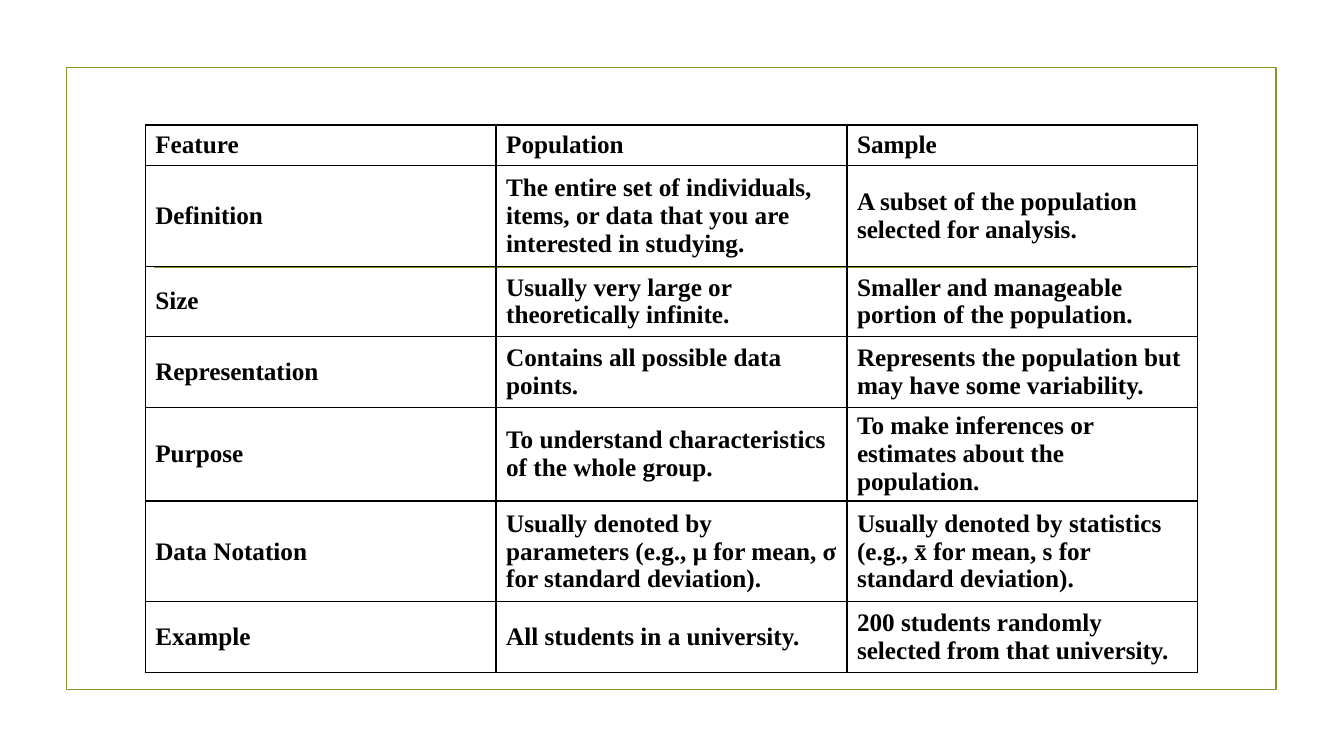
from dataclasses import dataclass

from lxml.etree import SubElement
from pptx import Presentation
from pptx.dml.color import RGBColor
from pptx.enum.shapes import MSO_CONNECTOR, MSO_SHAPE
from pptx.enum.text import MSO_ANCHOR
from pptx.oxml import parse_xml
from pptx.oxml.ns import nsdecls, qn
from pptx.slide import Slide
from pptx.table import Table, _Cell
from pptx.util import Inches, Pt

OLIVE = RGBColor(0x83, 0x99, 0x2A)
BLACK = RGBColor(0x00, 0x00, 0x00)
OUTLINE_WIDTH = Pt(1.25)
BORDER_WIDTH = Pt(1)
COLUMN_WIDTH = 3.48
FONT_FORMAT = {"name": "Times New Roman", "size": Pt(18), "bold": True}
CELL_FORMAT = {
    "vertical_anchor": MSO_ANCHOR.MIDDLE,
    "margin_left": Inches(0.1),
    "margin_right": Inches(0.1),
    "margin_top": Inches(0.05),
    "margin_bottom": Inches(0.05),
}


@dataclass(frozen=True)
class Comparison:
    feature: str
    population: str
    sample: str
    height: float = 0.7


COMPARISONS = [
    Comparison("Feature", "Population", "Sample", 0.4),
    Comparison(
        "Definition",
        "The entire set of individuals, items, or data that you are interested in studying.",
        "A subset of the population selected for analysis.",
        1,
    ),
    Comparison(
        "Size",
        "Usually very large or theoretically infinite.",
        "Smaller and manageable portion of the population.",
    ),
    Comparison(
        "Representation",
        "Contains all possible data points.",
        "Represents the population but may have some variability.",
    ),
    Comparison(
        "Purpose",
        "To understand characteristics of the whole group.",
        "To make inferences or estimates about the population.",
    ),
    Comparison(
        "Data Notation",
        "Usually denoted by parameters (e.g., μ for mean, σ for standard deviation).",
        "Usually denoted by statistics (e.g., x̄ for mean, s for standard deviation).",
        1,
    ),
    Comparison(
        "Example",
        "All students in a university.",
        "200 students randomly selected from that university.",
    ),
]


def apply_format(target: object, values: dict[str, object]) -> None:
    for attribute, value in values.items():
        setattr(target, attribute, value)


def draw_frame(slide: Slide) -> None:
    frame = slide.shapes.add_shape(
        MSO_SHAPE.RECTANGLE, Inches(0.66), Inches(0.67), Inches(12), Inches(6.17)
    )
    frame.shadow.inherit = False
    frame.fill.background()
    frame.line.color.rgb = OLIVE
    frame.line.width = OUTLINE_WIDTH


def draw_divider(slide: Slide) -> None:
    divider = slide.shapes.add_connector(
        MSO_CONNECTOR.STRAIGHT, Inches(1.53), Inches(2.65), Inches(11.81), Inches(2.65)
    )
    divider.line.color.rgb = OLIVE
    divider.line.width = OUTLINE_WIDTH
    SubElement(divider.element.spPr, qn("a:effectLst"))


def draw_borders(cell: _Cell) -> None:
    properties = cell._tc.get_or_add_tcPr()
    for position, side in enumerate(("lnL", "lnR", "lnT", "lnB")):
        border = parse_xml(
            f'<a:{side} {nsdecls("a")} w="{BORDER_WIDTH}"><a:solidFill>'
            f'<a:srgbClr val="{BLACK}"/></a:solidFill></a:{side}>'
        )
        properties.insert(position, border)


def fill_cell(cell: _Cell, wording: str) -> None:
    cell.text = wording
    apply_format(cell, CELL_FORMAT)
    cell.fill.background()
    font = cell.text_frame.paragraphs[0].runs[0].font
    apply_format(font, FONT_FORMAT)
    font.color.rgb = BLACK
    draw_borders(cell)


def fill_row(table: Table, index: int, comparison: Comparison) -> None:
    table.rows[index].height = Inches(comparison.height)
    wordings = (comparison.feature, comparison.population, comparison.sample)
    for cell, wording in zip(table.rows[index].cells, wordings):
        fill_cell(cell, wording)


def draw_comparisons(slide: Slide) -> None:
    total_height = sum(comparison.height for comparison in COMPARISONS)
    table = slide.shapes.add_table(
        len(COMPARISONS),
        3,
        Inches(1.44),
        Inches(1.24),
        Inches(3 * COLUMN_WIDTH),
        Inches(total_height),
    ).table
    apply_format(table, {"first_row": False, "horz_banding": False})
    for column in table.columns:
        column.width = Inches(COLUMN_WIDTH)
    for index, comparison in enumerate(COMPARISONS):
        fill_row(table, index, comparison)


def main() -> None:
    presentation = Presentation()
    presentation.slide_width = Inches(13.33)
    presentation.slide_height = Inches(7.5)
    slide = presentation.slides.add_slide(presentation.slide_layouts[6])
    draw_frame(slide)
    draw_divider(slide)
    draw_comparisons(slide)
    presentation.save("out.pptx")


if __name__ == "__main__":
    main()
